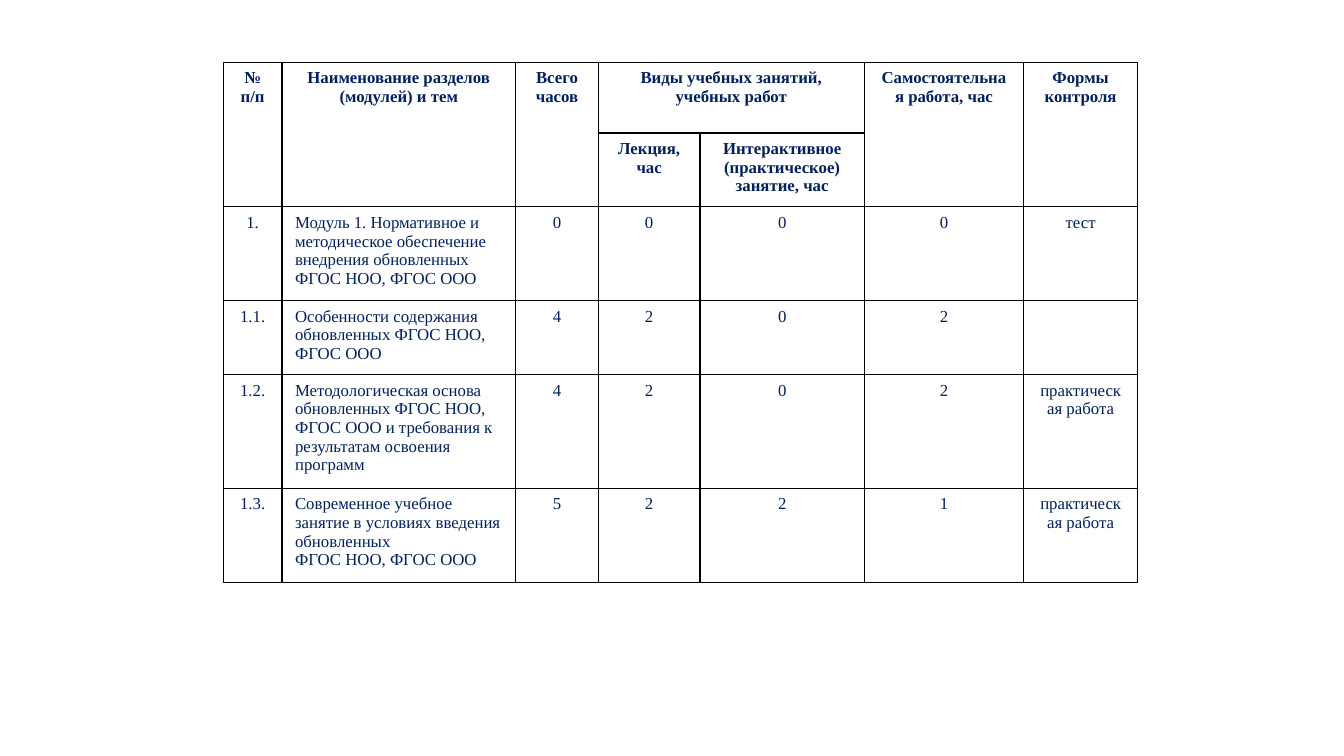
from lxml.etree import SubElement
from pptx import Presentation
from pptx.dml.color import RGBColor
from pptx.enum.text import PP_ALIGN as Align
from pptx.oxml.ns import qn
from pptx.util import Pt

COLORS = {"ink": "002060", "rule": "000000", "paper": "FFFFFF"}
FONT = "Times New Roman"
COLUMN_WIDTHS = [41.8, 167, 59, 72.7, 117.4, 113.8, 81.4]
ROW_HEIGHTS = [50.4, 52.8, 67, 52.8, 81.4, 67]
HEADER_ROWS = 2
NAME_COLUMN = 1
MERGES = [((0, column), (1, column)) for column in (0, 1, 2, 5, 6)] + [((0, 3), (0, 4))]
PLAN = [
    ["№ п/п", "Наименование разделов (модулей) и тем", "Всего часов",
     "Виды учебных занятий, учебных работ", "",
     "Самостоятельная работа, час", "Формы контроля"],
    ["", "", "", "Лекция, час", "Интерактивное (практическое) занятие, час", "", ""],
    ["1.", "Модуль 1. Нормативное и методическое обеспечение внедрения обновленных ФГОС НОО, ФГОС ООО",
     "0", "0", "0", "0", "тест"],
    ["1.1.", "Особенности содержания\nобновленных ФГОС НОО, ФГОС ООО",
     "4", "2", "0", "2", ""],
    ["1.2.", "Методологическая основа обновленных ФГОС НОО, ФГОС ООО и требования к результатам освоения\nпрограмм",
     "4", "2", "0", "2", "практическая работа"],
    ["1.3.", "Современное учебное занятие в условиях введения обновленных\nФГОС НОО, ФГОС ООО",
     "5", "2", "2", "1", "практическая работа"],
]


def write_text(frame, text, size=12, bold=False, align=Align.CENTER, color="ink"):
    for index, line in enumerate(text.split("\n")):
        para = frame.paragraphs[0] if index == 0 else frame.add_paragraph()
        para.alignment = align
        span = para.add_run()
        span.text = line
        span.font.name = FONT
        span.font.size = Pt(size)
        span.font.bold = bold
        span.font.color.rgb = RGBColor.from_string(COLORS[color])


def style_cell(cell):
    cell.margin_left = cell.margin_right = Pt(9.4)
    cell.margin_top = cell.margin_bottom = Pt(4.7)
    properties = cell._tc.get_or_add_tcPr()
    for side in ("a:lnL", "a:lnR", "a:lnT", "a:lnB"):
        border = SubElement(properties, qn(side), w=str(Pt(1)))
        fill = SubElement(border, qn("a:solidFill"))
        SubElement(fill, qn("a:srgbClr"), val=COLORS["rule"])
    cell.fill.solid()
    cell.fill.fore_color.rgb = RGBColor.from_string(COLORS["paper"])


def add_plan_table(page, left, top):
    box = page.shapes.add_table(
        len(ROW_HEIGHTS), len(COLUMN_WIDTHS), Pt(left), Pt(top),
        Pt(sum(COLUMN_WIDTHS)), Pt(sum(ROW_HEIGHTS)))
    table = box.table
    table.first_row = table.horz_banding = False
    for column, width in zip(table.columns, COLUMN_WIDTHS):
        column.width = Pt(width)
    for row, height in zip(table.rows, ROW_HEIGHTS):
        row.height = Pt(height)
    for first, last in MERGES:
        table.cell(*first).merge(table.cell(*last))
    for row_index, texts in enumerate(PLAN):
        for column_index, text in enumerate(texts):
            cell = table.cell(row_index, column_index)
            style_cell(cell)
            if text:
                header = row_index < HEADER_ROWS
                is_name = column_index == NAME_COLUMN and not header
                write_text(cell.text_frame, text, bold=header,
                           align=Align.LEFT if is_name else Align.CENTER)


def main():
    deck = Presentation()
    deck.slide_width, deck.slide_height = Pt(960), Pt(540)
    page = deck.slides.add_slide(deck.slide_layouts[6])
    add_plan_table(page, 159.6, 44.6)
    deck.save("out.pptx")


if __name__ == "__main__":
    main()
